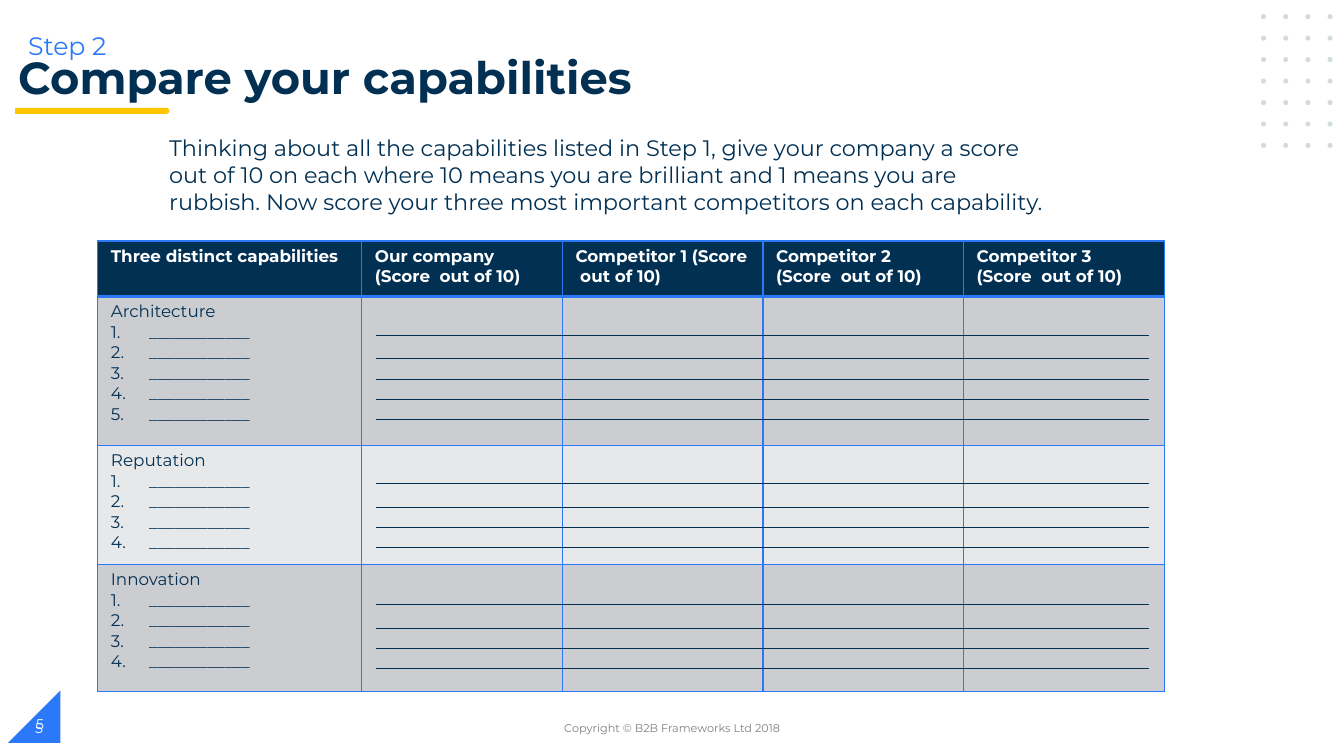
"""Build the capability comparison slide."""
from dataclasses import dataclass
from itertools import product
from typing import Optional

from lxml.etree import SubElement, fromstring
from pptx import Presentation
from pptx.dml.color import RGBColor
from pptx.enum.shapes import MSO_CONNECTOR, MSO_SHAPE
from pptx.enum.text import MSO_ANCHOR, PP_ALIGN
from pptx.oxml.ns import nsdecls, qn
from pptx.util import Inches, Length, Pt

FONT = "Montserrat"
NAVY, BLUE, YELLOW, WHITE = "023053", "2B79F8", "FFC600", "FFFFFF"
DOT_GREY, FOOTER_GREY, DARK_BAND, LIGHT_BAND = "D1DBE0", "808080", "CCCDD1", "E7E8E9"
COLUMN_WIDTHS = (26.2, 19.9, 19.9, 19.9, 19.9)
ROW_HEIGHTS = (5.5, 14.8, 11.8, 12.6)
HEADERS = (
    "Three distinct capabilities",
    "Our company (Score  out of 10)",
    "Competitor 1 (Score  out of 10)",
    "Competitor 2 (Score  out of 10)",
    "Competitor 3 (Score  out of 10)",
)


@dataclass(frozen=True)
class Box:
    """A rectangle measured in grid columns and rows."""
    column: float
    row: float
    columns: float
    rows: float


@dataclass(frozen=True)
class Label:
    """A piece of text with its place and look."""
    text: str
    box: Box
    size: float
    color: str
    anchor: MSO_ANCHOR = MSO_ANCHOR.TOP
    alignment: PP_ALIGN = PP_ALIGN.LEFT


@dataclass(frozen=True)
class Capability:
    """A table band with its numbered blanks and first score line."""
    name: str
    blanks: int
    fill: str
    first_line: float


@dataclass(frozen=True)
class Ornament:
    """A filled preset shape."""
    preset: MSO_SHAPE
    box: Box
    color: str
    flipped: bool = False


CAPABILITIES = (
    Capability("Architecture", 5, DARK_BAND, 33.3),
    Capability("Reputation", 4, LIGHT_BAND, 48),
    Capability("Innovation", 4, DARK_BAND, 60),
)
ORNAMENTS = (
    Ornament(MSO_SHAPE.RIGHT_TRIANGLE, Box(0.8, 68.5, 5.2, 5.2), BLUE, True),
    Ornament(MSO_SHAPE.FLOWCHART_TERMINATOR, Box(14.9, 10.7, 1.9, 0.6), YELLOW),
    Ornament(MSO_SHAPE.RECTANGLE, Box(1.5, 10.7, 14.1, 0.6), YELLOW),
    *(
        Ornament(MSO_SHAPE.OVAL, Box(125.1 + 2.2 * column, 1.4 + 2.13 * row, 0.5, 0.5), DOT_GREY)
        for row, column in product(range(7), range(4))
    ),
)
LABELS = (
    Label(
        "Thinking about all the capabilities listed in Step 1, give your company a score "
        "out of 10 on each where 10 means you are brilliant and 1 means you are rubbish. "
        "Now score your three most important competitors on each capability.",
        Box(15.8, 12.8, 89.5, 9.1), 16, NAVY,
    ),
    Label("Step 2", Box(1.8, 2.5, 13.9, 4), 18, BLUE),
    Label("5", Box(2.5, 70.2, 30, 4), 10, WHITE, MSO_ANCHOR.MIDDLE),
    Label("Copyright © B2B Frameworks Ltd 2018", Box(44.2, 70.2, 45, 4), 8, FOOTER_GREY,
          MSO_ANCHOR.MIDDLE, PP_ALIGN.CENTER),
    Label("5", Box(2.6, 69.8, 30, 4), 10, WHITE, MSO_ANCHOR.MIDDLE),
)


def grid(steps: float) -> Length:
    """Turn grid steps, ten to the inch, into a length."""
    return Inches(steps / 10)


def place(box: Box) -> tuple:
    """Return left, top, width and height of a box."""
    return grid(box.column), grid(box.row), grid(box.columns), grid(box.rows)


def paint(color_owner, color: str) -> None:
    """Fill a shape or cell with a solid colour."""
    color_owner.fill.solid()
    color_owner.fill.fore_color.rgb = RGBColor.from_string(color)


def style_text(text_frame, size: float, color: str, bold: bool = False) -> None:
    """Format every run of a text frame."""
    for paragraph in text_frame.paragraphs:
        for run in paragraph.runs:
            run.font.name, run.font.size, run.font.bold = FONT, Pt(size), bold
            run.font.color.rgb = RGBColor.from_string(color)


def draw_ornament(slide, ornament: Ornament) -> None:
    """Draw one decorative shape."""
    shape = slide.shapes.add_shape(ornament.preset, *place(ornament.box))
    shape.shadow.inherit = False
    paint(shape, ornament.color)
    shape.line.fill.background()
    if ornament.flipped:
        shape.element.spPr.find(qn("a:xfrm")).set("flipH", "1")


def draw_label(slide, label: Label) -> None:
    """Draw one text box."""
    text_frame = slide.shapes.add_textbox(*place(label.box)).text_frame
    text_frame.word_wrap = True
    text_frame.vertical_anchor = label.anchor
    text_frame.text = label.text
    text_frame.paragraphs[0].alignment = label.alignment
    style_text(text_frame, label.size, label.color)


def draw_title(slide, text: str) -> None:
    """Fill and place the title placeholder."""
    title = slide.shapes.title
    title.left, title.top, title.width, title.height = place(Box(0.8, 5.1, 93.5, 5.6))
    title.text_frame.text = text
    title.text_frame.vertical_anchor = MSO_ANCHOR.MIDDLE
    title.text_frame.paragraphs[0].alignment = PP_ALIGN.LEFT
    title.text_frame.paragraphs[0].line_spacing = 0.9
    style_text(title.text_frame, 32, NAVY, True)


def format_cell(cell, fill: str, bottom_width: float) -> None:
    """Set the fill, margins and borders of a cell."""
    paint(cell, fill)
    cell.margin_left = cell.margin_right = grid(1.3)
    cell.margin_top = cell.margin_bottom = grid(0.5)
    widths = {"lnL": 1, "lnR": 1, "lnT": 1, "lnB": bottom_width}
    for position, (side, width) in enumerate(widths.items()):
        border = fromstring(
            f'<a:{side} {nsdecls("a")} w="{Pt(width)}"><a:solidFill>'
            f'<a:srgbClr val="{BLUE}"/></a:solidFill></a:{side}>'
        )
        cell._tc.get_or_add_tcPr().insert(position, border)


def write_cell(cell, text: str, color: str, bold: bool = False) -> None:
    """Write a cell and number the paragraphs after the first."""
    cell.text_frame.text = text
    for paragraph in cell.text_frame.paragraphs[1:]:
        properties = paragraph._p.get_or_add_pPr()
        properties.set("marL", str(grid(3.8)))
        properties.set("indent", str(-grid(3.8)))
        SubElement(properties, qn("a:buAutoNum"), type="arabicPeriod")
    style_text(cell.text_frame, 12, color, bold)


def draw_table(slide) -> None:
    """Draw the table of capabilities and companies."""
    box = Box(9.7, 23.9, sum(COLUMN_WIDTHS), sum(ROW_HEIGHTS))
    table = slide.shapes.add_table(len(ROW_HEIGHTS), len(COLUMN_WIDTHS), *place(box)).table
    for column, width in zip(table.columns, COLUMN_WIDTHS):
        column.width = grid(width)
    for row, height in zip(table.rows, ROW_HEIGHTS):
        row.height = grid(height)
    for cell, header in zip(table.rows[0].cells, HEADERS):
        format_cell(cell, NAVY, 3)
        write_cell(cell, header, WHITE, True)
    for index, capability in enumerate(CAPABILITIES, 1):
        for cell in table.rows[index].cells:
            format_cell(cell, capability.fill, 1)
        lines = [capability.name] + ["____________"] * capability.blanks
        write_cell(table.cell(index, 0), "\n".join(lines), NAVY)


def draw_score_lines(slide, capability: Capability) -> None:
    """Draw the writing lines of one capability."""
    for index in range(capability.blanks):
        row = grid(capability.first_line + 2 * index + (0.3 if index else 0))
        line = slide.shapes.add_connector(MSO_CONNECTOR.STRAIGHT, grid(37.3), row, grid(114), row)
        line.line.width = Pt(0.5)
        line.line.color.rgb = RGBColor.from_string(NAVY)
        SubElement(line.element.spPr, qn("a:effectLst"))


def main(output: Optional[str] = None) -> None:
    """Build and save the presentation."""
    presentation = Presentation()
    presentation.slide_width, presentation.slide_height = grid(133.33), grid(75)
    slide = presentation.slides.add_slide(presentation.slide_layouts[5])
    for ornament in ORNAMENTS:
        draw_ornament(slide, ornament)
    draw_table(slide)
    for capability in CAPABILITIES:
        draw_score_lines(slide, capability)
    draw_title(slide, "Compare your capabilities")
    for label in LABELS:
        draw_label(slide, label)
    presentation.save("out.pptx")


if __name__ == "__main__":
    main()
